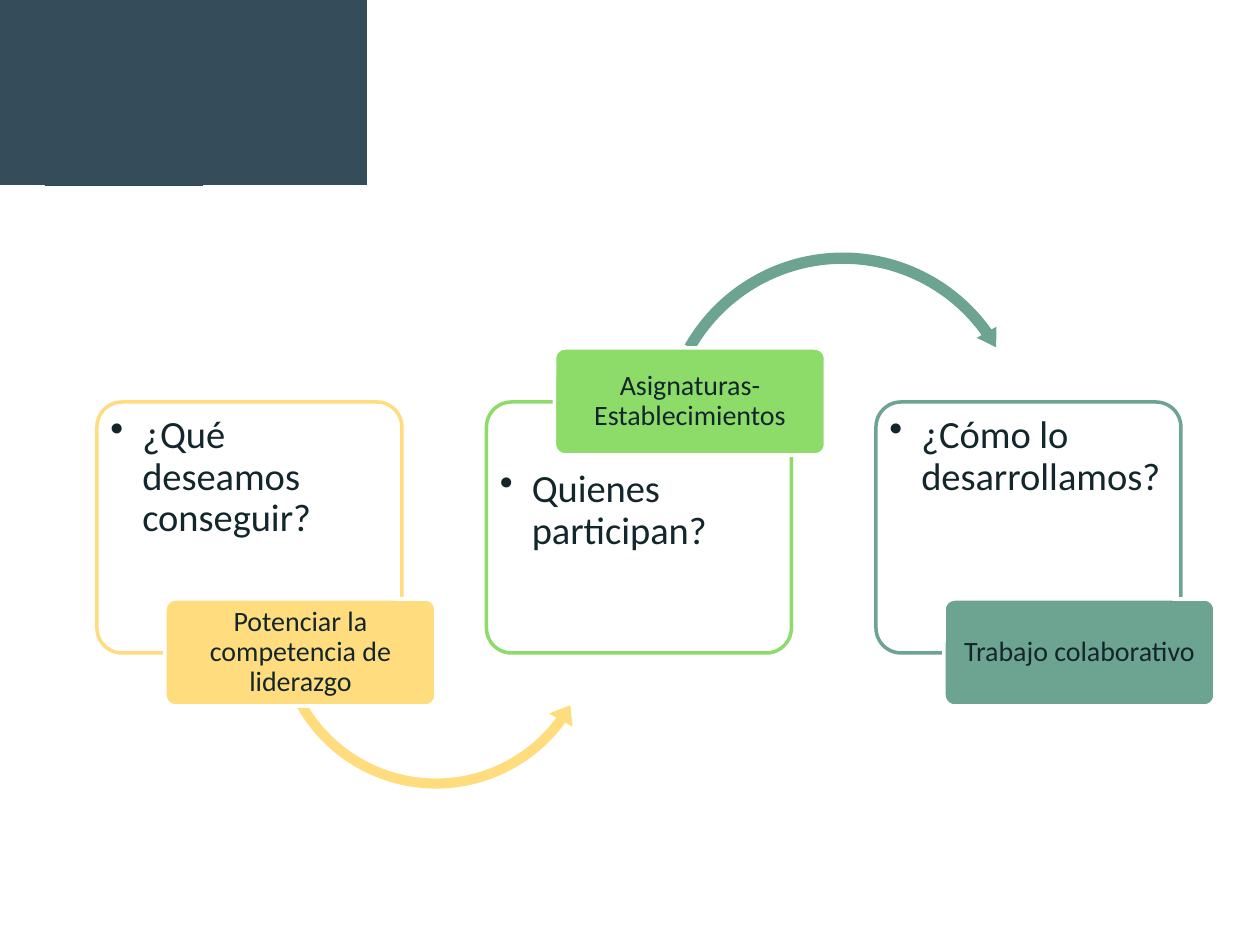
import pptx
import pptx.util
import pptx.dml.color
import pptx.enum.shapes
import pptx.enum.text
import pptx.oxml
import pptx.oxml.ns

RGB = pptx.dml.color.RGBColor
SHAPE = pptx.enum.shapes.MSO_SHAPE
ALIGN = pptx.enum.text.PP_ALIGN
ANCHOR = pptx.enum.text.MSO_ANCHOR

WHITE = RGB(0xFF, 0xFF, 0xFF)
INK = RGB(0x13, 0x26, 0x2C)
SLATE = RGB(0x35, 0x4D, 0x5A)
TEAL = RGB(0x26, 0x4C, 0x59)
YELLOW = RGB(0xFF, 0xDC, 0x7D)
GREEN = RGB(0x8D, 0xDC, 0x6A)
SAGE = RGB(0x6C, 0xA4, 0x91)

PX_PER_INCH = 126
CARD_W, CARD_H = 305, 251
LABEL_W, LABEL_H = 271, 107
LABEL_DX = 68
LABEL_OVERLAP = 54

# Question, label, colour, whether the label sits on the top edge
STEPS = [
    ("¿Qué deseamos conseguir?", "Potenciar la competencia de liderazgo", YELLOW, False),
    ("Quienes participan?", "Asignaturas-Establecimientos", GREEN, True),
    ("¿Cómo lo desarrollamos?", "Trabajo colaborativo", SAGE, False),
]

# Kind, offset from its card, side, colour, adjustments
ARROWS = {
    0: (SHAPE.LEFT_CIRCULAR_ARROW, 171, 59, 336, YELLOW,
        (0.03, 3.93, 21.68, 90.25, 0.04)),
    1: (SHAPE.CIRCULAR_ARROW, 169, -155, 375, SAGE,
        (0.03, 3.49, 194.75, 125.76, 0.03)),
}


def px(n):
    return pptx.util.Emu(round(n * 914400 / PX_PER_INCH))


def add_shape(slide, kind, x, y, w, h, fill, line=None, adjustments=()):
    sp = slide.shapes.add_shape(kind, px(x), px(y), px(w), px(h))
    sp.shadow.inherit = False
    sp.fill.solid()
    sp.fill.fore_color.rgb = fill
    if line is None:
        sp.line.fill.background()
    else:
        sp.line.color.rgb = line
        sp.line.width = pptx.util.Pt(2)
    for i, value in enumerate(adjustments):
        sp.adjustments[i] = value
    return sp


def set_alpha(sp, percent):
    color = sp.fill._xPr.find(".//" + pptx.oxml.ns.qn("a:srgbClr"))
    color.append(pptx.oxml.parse_xml(
        f'<a:alpha {pptx.oxml.ns.nsdecls("a")} val="{percent * 1000}"/>'))


def add_bullet(p, indent):
    pPr = p._p.get_or_add_pPr()
    pPr.set("marL", str(px(indent)))
    pPr.set("indent", str(-px(indent)))
    pPr.append(pptx.oxml.parse_xml(
        f'<a:buChar {pptx.oxml.ns.nsdecls("a")} char="•"/>'))


def put_text(sp, text, size, align=ALIGN.LEFT, anchor=ANCHOR.TOP,
             margins=(6, 6, 6, 6), bullet=False):
    """Write one paragraph; margins are left, top, right, bottom."""
    tf = sp.text_frame
    tf.word_wrap = True
    tf.vertical_anchor = anchor
    tf.margin_left, tf.margin_top, tf.margin_right, tf.margin_bottom = map(px, margins)
    p = tf.paragraphs[0]
    if bullet:
        add_bullet(p, 32)
    p.alignment = align
    p.line_spacing = 0.9
    r = p.add_run()
    r.text = text
    r.font.name = "Calibri"
    r.font.size = pptx.util.Pt(size)
    r.font.color.rgb = INK


def add_corner(slide, x, y, w, h):
    add_shape(slide, SHAPE.RECTANGLE, x + 55, y + 102, 158, 84, TEAL)
    add_shape(slide, SHAPE.RECTANGLE, x, y, w, h, SLATE)


def add_card(slide, x, y, question, color, label_on_top):
    card = add_shape(slide, SHAPE.ROUNDED_RECTANGLE, x, y, CARD_W, CARD_H,
                     WHITE, color, [0.1])
    set_alpha(card, 90)
    top = 6 + (LABEL_OVERLAP if label_on_top else 0)
    put_text(card, question, 22, margins=(6, top, 6, 6), bullet=True)


def add_arrow(slide, x, y, kind, dx, dy, side, color, adjustments):
    add_shape(slide, kind, x + dx, y + dy, side, side, color,
              adjustments=adjustments)


def add_label(slide, x, y, text, color, on_top):
    dy = -LABEL_OVERLAP if on_top else CARD_H - LABEL_OVERLAP
    label = add_shape(slide, SHAPE.ROUNDED_RECTANGLE, x + LABEL_DX, y + dy,
                      LABEL_W, LABEL_H, color, WHITE, [0.1])
    put_text(label, text, 16, align=ALIGN.CENTER, anchor=ANCHOR.MIDDLE,
             margins=(4, 3, 4, 3))


def add_process(slide, x, y, w):
    """Spread the step cards over the width, each with its label and arrow."""
    pitch = (w - CARD_W) / (len(STEPS) - 1)
    for i, (question, text, color, on_top) in enumerate(STEPS):
        left = x + i * pitch
        add_card(slide, left, y, question, color, on_top)
        if i in ARROWS:
            add_arrow(slide, left, y, *ARROWS[i])
        add_label(slide, left, y, text, color, on_top)


def main():
    prs = pptx.Presentation()
    prs.slide_width, prs.slide_height = px(1260), px(945)
    slide = prs.slides.add_slide(prs.slide_layouts[6])
    add_corner(slide, -10, 0, 377, 185)
    add_process(slide, 97, 402, 1084)
    prs.save("out.pptx")


if __name__ == "__main__":
    main()
